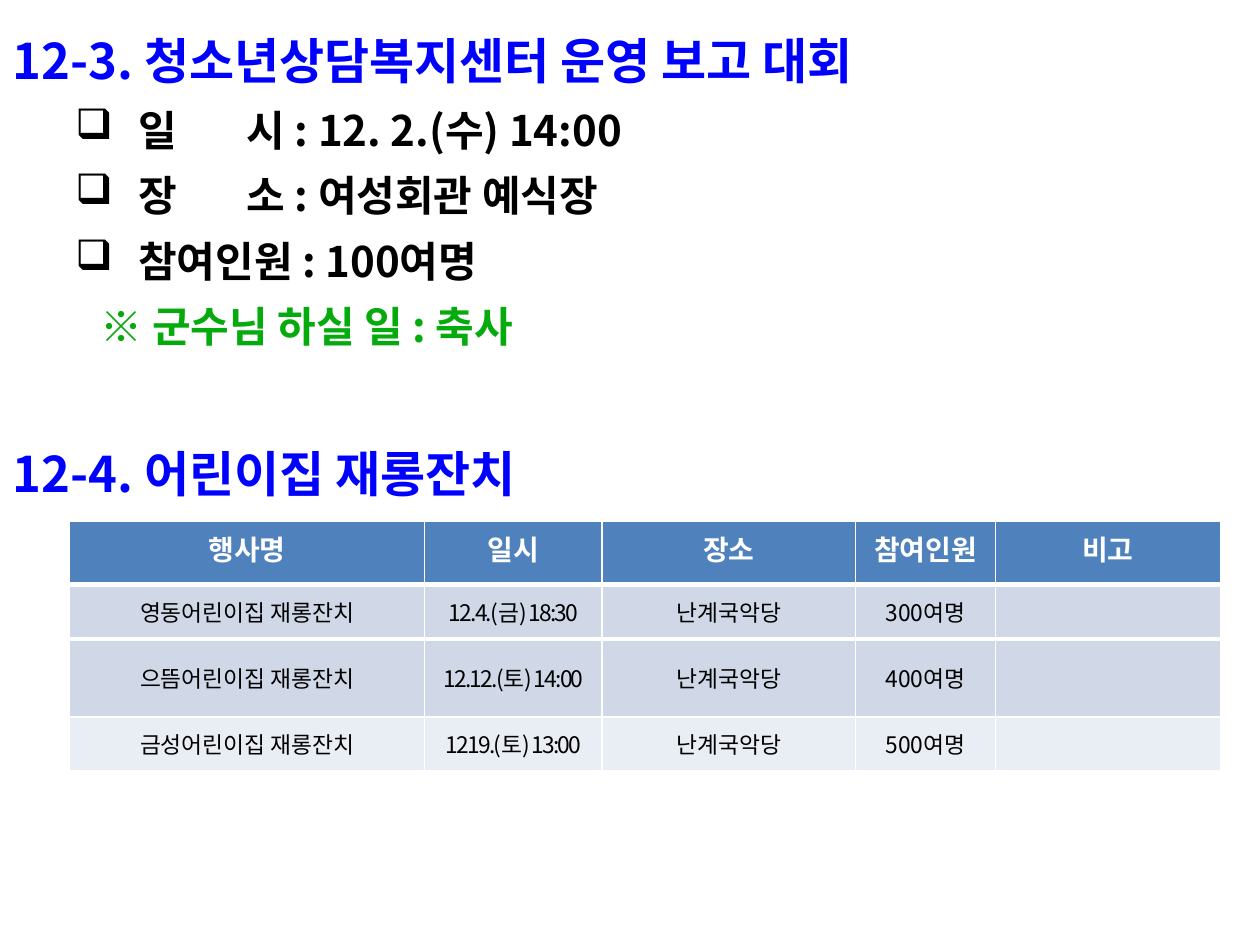
from lxml.etree import SubElement
from pptx import Presentation
from pptx.dml.color import RGBColor
from pptx.enum.text import MSO_ANCHOR as Anchor, PP_ALIGN as Align
from pptx.oxml.ns import qn
from pptx.util import Inches, Pt

FONT = "Noto Sans CJK KR"


def color(value):
    return RGBColor.from_string(value)


def format_text(paragraph, size, value, bold):
    for run in paragraph.runs:
        font = run.font
        font.name, font.size, font.bold = FONT, Pt(size), bold
        font.color.rgb = color(value)
        SubElement(run._r.get_or_add_rPr(), qn("a:ea"), typeface=FONT)


presentation = Presentation()
presentation.slide_width, presentation.slide_height = Inches(10), Inches(7.5)
slide = presentation.slides.add_slide(presentation.slide_layouts[6])

# Sections: left indent, first-line indent, bullet, text, size, colour
sections = [
    (0, 9.84, 3.36, [
        (0.58, -0.58, False, "12-3. 청소년상담복지센터 운영 보고 대회", 28, "0000FF"),
        (1, -0.5, True, "일\t시 : 12. 2.(수) 14:00", 24, "000000"),
        (1, -0.5, True, "장\t소 : 여성회관 예식장", 24, "000000"),
        (1, -0.5, True, "참여인원 : 100여명", 24, "000000"),
        (0.7, 0, False, "※ 군수님 하실 일 : 축사", 24, "05AB0D"),
    ]),
    (3.28, 9.69, 3.98, [
        (0.58, -0.58, False, "12-4. 어린이집 재롱잔치", 28, "0000FF"),
    ]),
]
for top, width, height, lines in sections:
    box = slide.shapes.add_textbox(0, Inches(top), Inches(width), Inches(height))
    text_frame = box.text_frame
    text_frame.word_wrap = False
    text_frame.margin_top = Inches(0.1)
    text_frame.text = "\n".join(line[3] for line in lines)
    for paragraph, line in zip(text_frame.paragraphs, lines):
        left, indent, bullet, text, size, value = line
        paragraph.line_spacing = 1.3
        properties = paragraph._p.get_or_add_pPr()
        properties.set("marL", str(Inches(left)))
        properties.set("indent", str(Inches(indent)))
        if bullet:
            # The letter q is the shadowed square in Wingdings
            SubElement(properties, qn("a:buFont"), typeface="Wingdings",
                       pitchFamily="2", charset="2")
            SubElement(properties, qn("a:buChar"), char="q")
        else:
            SubElement(properties, qn("a:buNone"))
        if "\t" in text:
            # One stop counted from the indent, one from the box edge
            stops = SubElement(properties, qn("a:tabLst"))
            for position in (0.86, 1.86):
                SubElement(stops, qn("a:tab"), pos=str(Inches(position)), algn="l")
        format_text(paragraph, size, value, True)

# Event table
rows = [
    ["행사명", "일시", "장소", "참여인원", "비고"],
    ["영동어린이집 재롱잔치", "12.4.(금) 18:30", "난계국악당", "300여명", ""],
    ["으뜸어린이집 재롱잔치", "12.12.(토) 14:00", "난계국악당", "400여명", ""],
    ["금성어린이집 재롱잔치", "1219.(토) 13:00", "난계국악당", "500여명", ""],
]
row_fills = ["4F81BD", "D0D8E8", "D0D8E8", "E9EDF4"]
row_heights = [0.5, 0.43, 0.62, 0.43]
column_widths = [2.82, 1.41, 2.01, 1.11, 1.79]
rule_widths = [1, 3, 3, 1, 1]  # horizontal rules, top to bottom

table = slide.shapes.add_table(
    len(rows), len(column_widths), Inches(0.55), Inches(4.14),
    Inches(sum(column_widths)), Inches(sum(row_heights))).table
for column, width in zip(table.columns, column_widths):
    column.width = Inches(width)

for row_index, texts in enumerate(rows):
    table.rows[row_index].height = Inches(row_heights[row_index])
    header = row_index == 0
    for column_index, text in enumerate(texts):
        cell = table.cell(row_index, column_index)
        cell.text = text
        cell.vertical_anchor = Anchor.TOP if header else Anchor.MIDDLE
        paragraph = cell.text_frame.paragraphs[0]
        paragraph.alignment = Align.CENTER
        paragraph.font.size = Pt(16 if header else 13)
        format_text(paragraph, 16 if header else 13,
                    "FFFFFF" if header else "000000", header)
        if column_index == 1 and not header:
            paragraph.runs[0]._r.get_or_add_rPr().set("spc", "-100")

        # White borders come before the fill in the cell properties
        properties = cell._tc.get_or_add_tcPr()
        borders = {"lnL": 1, "lnR": 1, "lnT": rule_widths[row_index],
                   "lnB": rule_widths[row_index + 1]}
        for side, width in borders.items():
            border = SubElement(properties, qn("a:" + side), w=str(Pt(width)))
            fill = SubElement(border, qn("a:solidFill"))
            SubElement(fill, qn("a:srgbClr"), val="FFFFFF")
        cell.fill.solid()
        cell.fill.fore_color.rgb = color(row_fills[row_index])

presentation.save("out.pptx")
